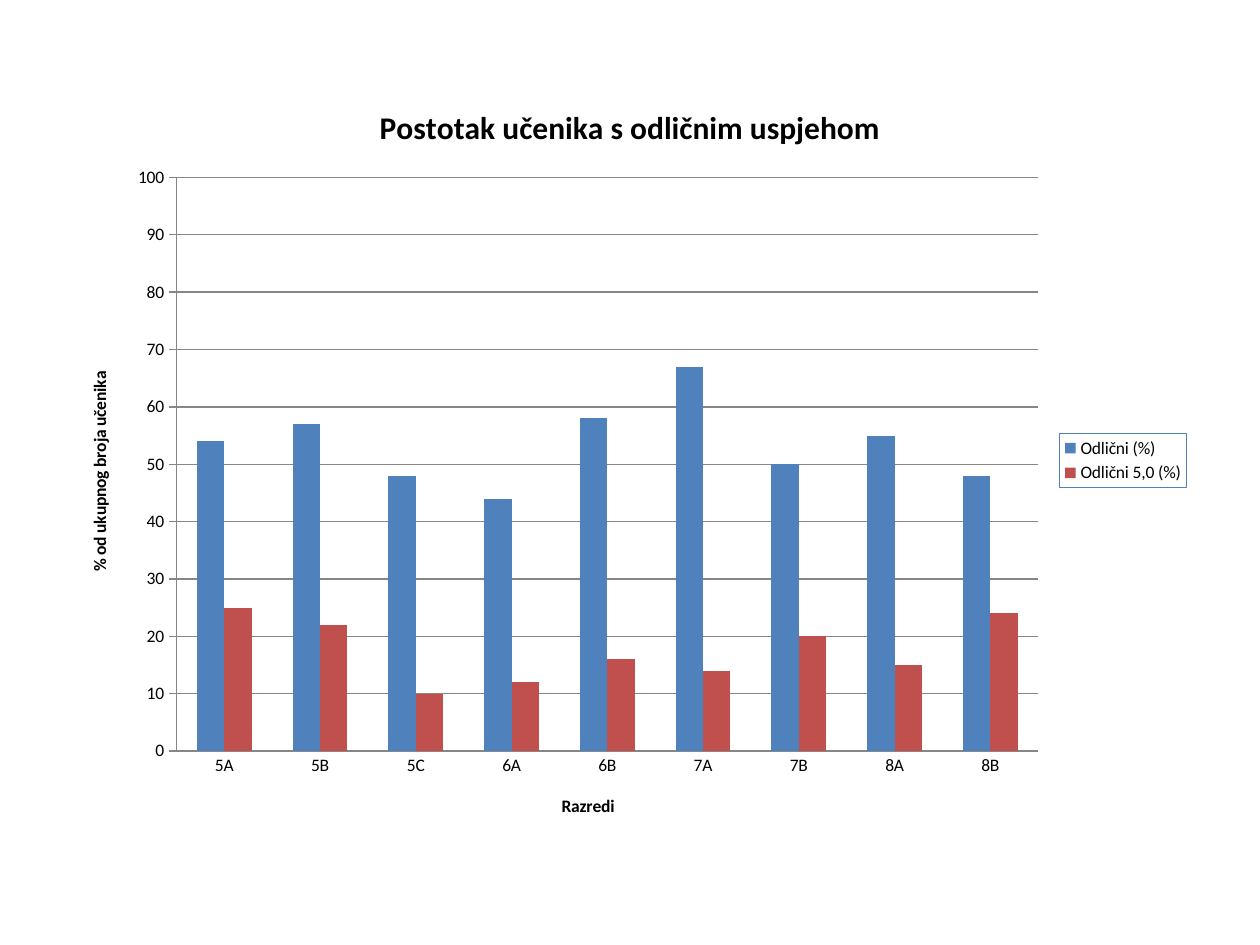
from dataclasses import dataclass

from lxml.etree import SubElement
from pptx import Presentation
from pptx.chart.chart import Chart
from pptx.chart.data import CategoryChartData
from pptx.dml.color import RGBColor
from pptx.enum.chart import XL_CHART_TYPE, XL_LEGEND_POSITION, XL_TICK_MARK
from pptx.oxml import parse_xml
from pptx.oxml.ns import nsdecls, qn
from pptx.util import Inches, Pt

FONT_NAME = "Calibri"
TEXT_COLOR = "000000"
LINE_COLOR = "868686"
LEGEND_BORDER = "4F81BD"


@dataclass
class GradeSeries:
    name: str
    values: tuple[int, ...]
    color: str


CLASSES = ("5A", "5B", "5C", "6A", "6B", "7A", "7B", "8A", "8B")
GRADES = (
    GradeSeries("Odlični (%)", (54, 57, 48, 44, 58, 67, 50, 55, 48), "4F81BD"),
    GradeSeries("Odlični 5,0 (%)", (25, 22, 10, 12, 16, 14, 20, 15, 24), "C0504D"),
)


def rgb(color: str) -> RGBColor:
    return RGBColor.from_string(color)


def style_font(font, size: float, bold: bool = False) -> None:
    font.name = FONT_NAME
    font.size = Pt(size)
    font.bold = bold
    font.color.rgb = rgb(TEXT_COLOR)


def add_title(owner, text: str, size: float) -> None:
    """Give a chart or an axis a bold title."""
    owner.has_title = True
    title = owner.chart_title if isinstance(owner, Chart) else owner.axis_title
    run = title.text_frame.paragraphs[0].add_run()
    run.text = text
    style_font(run.font, size, bold=True)


def style_line(line, color: str) -> None:
    line.color.rgb = rgb(color)
    line.width = Pt(0.75)


def place_plot(chart: Chart, x: float, y: float, width: float, height: float) -> None:
    """Set the inner plot area as fractions of the chart."""
    plot_area = chart.element.find(".//" + qn("c:plotArea"))
    for old_layout in plot_area.findall(qn("c:layout")):
        plot_area.remove(old_layout)
    layout = parse_xml(f"<c:layout {nsdecls('c')}/>")
    plot_area.insert(0, layout)
    manual = SubElement(layout, qn("c:manualLayout"))
    settings = {"layoutTarget": "inner", "xMode": "edge", "yMode": "edge",
                "x": x, "y": y, "w": width, "h": height}
    for name, value in settings.items():
        SubElement(manual, qn(f"c:{name}")).set("val", str(value))


def add_legend(chart: Chart) -> None:
    chart.has_legend = True
    legend = chart.legend
    legend.position = XL_LEGEND_POSITION.RIGHT
    legend.include_in_layout = False
    style_font(legend.font, 10)
    border = parse_xml(
        f"<c:spPr {nsdecls('c', 'a')}><a:ln w='9525'><a:solidFill>"
        f"<a:srgbClr val='{LEGEND_BORDER}'/></a:solidFill></a:ln></c:spPr>"
    )
    overlay = chart.element.find(".//" + qn("c:legend")).find(qn("c:overlay"))
    overlay.addnext(border)


def style_axes(chart: Chart) -> None:
    for axis, title in ((chart.category_axis, "Razredi"),
                        (chart.value_axis, "% od ukupnog broja učenika")):
        add_title(axis, title, 10)
        style_font(axis.tick_labels.font, 10)
        style_line(axis.format.line, LINE_COLOR)
        axis.minor_tick_mark = XL_TICK_MARK.NONE
    chart.category_axis.major_tick_mark = XL_TICK_MARK.NONE
    value_axis = chart.value_axis
    value_axis.major_tick_mark = XL_TICK_MARK.CROSS
    value_axis.minimum_scale = 0
    value_axis.maximum_scale = 100
    value_axis.major_unit = 10
    value_axis.has_major_gridlines = True
    style_line(value_axis.major_gridlines.format.line, LINE_COLOR)


def add_grade_chart(slide) -> None:
    chart_data = CategoryChartData()
    chart_data.categories = CLASSES
    for grade in GRADES:
        chart_data.add_series(grade.name, grade.values)
    chart = slide.shapes.add_chart(
        XL_CHART_TYPE.COLUMN_CLUSTERED,
        Inches(0.5), Inches(0.62), Inches(9), Inches(6.07), chart_data,
    ).chart
    style_font(chart.font, 10)
    add_title(chart, "Postotak učenika s odličnim uspjehom", 18)
    style_axes(chart)
    add_legend(chart)
    place_plot(chart, 0.1, 0.13, 0.76, 0.75)

    plot = chart.plots[0]
    plot.gap_width = 150
    plot.overlap = 0
    plot.vary_by_categories = False
    for series, grade in zip(plot.series, GRADES):
        series.format.fill.solid()
        series.format.fill.fore_color.rgb = rgb(grade.color)


def main() -> None:
    presentation = Presentation()
    presentation.slide_width = Inches(10)
    presentation.slide_height = Inches(7.5)
    slide = presentation.slides.add_slide(presentation.slide_layouts[6])
    add_grade_chart(slide)
    presentation.save("out.pptx")


if __name__ == "__main__":
    main()
